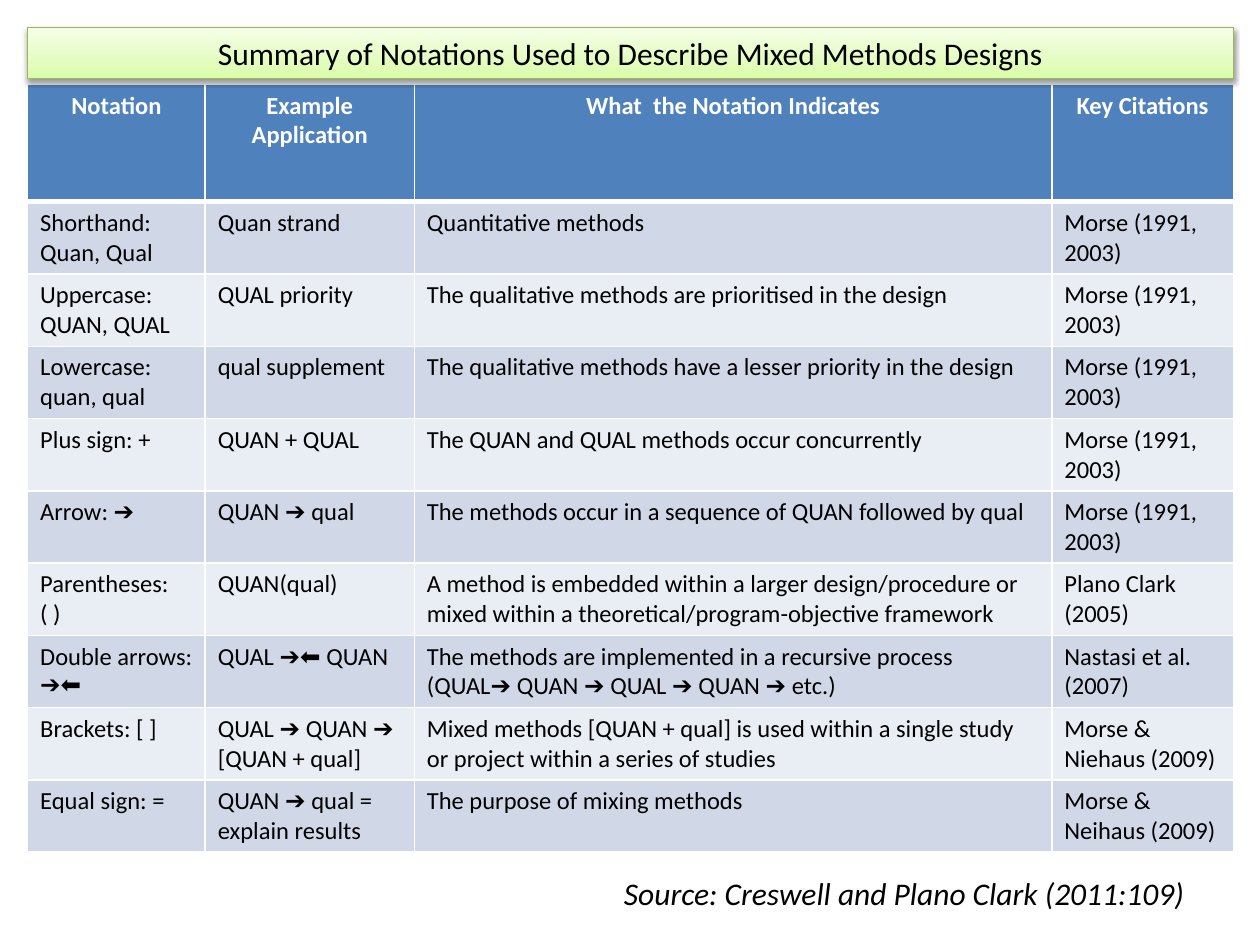
from itertools import groupby

from lxml import etree
from pptx import Presentation
from pptx.dml.color import RGBColor
from pptx.enum.text import MSO_ANCHOR, MSO_AUTO_SIZE, PP_ALIGN
from pptx.oxml import parse_xml
from pptx.oxml.ns import nsdecls, qn
from pptx.util import Pt

LEFT, CENTER, RIGHT = PP_ALIGN.LEFT, PP_ALIGN.CENTER, PP_ALIGN.RIGHT
MIDDLE = MSO_ANCHOR.MIDDLE
NO_AUTOFIT = MSO_AUTO_SIZE.NONE
FIT_SHAPE = MSO_AUTO_SIZE.SHAPE_TO_FIT_TEXT

COLORS = {
    "text": "000000",
    "white": "FFFFFF",
    "header": "4F81BD",
    "odd_row": "D0D8E8",
    "even_row": "E9EDF4",
    "title_line": "98B955",
}
TITLE_STOPS = [(0, "DAFDA7"), (35, "E4FCC2"), (100, "F5FFE7")]
ARROWS = "➔⬅"

COLUMN_WIDTHS = [101.5, 119.5, 364.3, 103.7]
HEADER_HEIGHT, ROW_HEIGHT, TABLE_HEIGHT = 67, 29.5, 434
ROWS = [
    ("Notation", "Example Application", "What  the Notation Indicates", "Key Citations"),
    ("Shorthand: Quan, Qual", "Quan strand", "Quantitative methods", "Morse (1991, 2003)"),
    ("Uppercase: QUAN, QUAL", "QUAL priority",
     "The qualitative methods are prioritised in the design", "Morse (1991, 2003)"),
    ("Lowercase: quan, qual", "qual supplement",
     "The qualitative methods have a lesser priority in the design", "Morse (1991, 2003)"),
    ("Plus sign: +", "QUAN + QUAL",
     "The QUAN and QUAL methods occur concurrently", "Morse (1991, 2003)"),
    ("Arrow: ➔", "QUAN ➔ qual",
     "The methods occur in a sequence of QUAN followed by qual", "Morse (1991, 2003)"),
    ("Parentheses: ( )", "QUAN(qual)",
     "A method is embedded within a larger design/procedure or mixed within a "
     "theoretical/program-objective framework", "Plano Clark (2005)"),
    ("Double arrows: ➔⬅", "QUAL ➔⬅ QUAN",
     "The methods are implemented in a recursive process "
     "(QUAL➔ QUAN ➔ QUAL ➔ QUAN ➔ etc.)", "Nastasi et al. (2007)"),
    ("Brackets: [ ]", "QUAL ➔ QUAN ➔ [QUAN + qual]",
     "Mixed methods [QUAN + qual] is used within a single study or project "
     "within a series of studies", "Morse & Niehaus (2009)"),
    ("Equal sign: =", "QUAN ➔ qual = explain results",
     "The purpose of mixing methods", "Morse & Neihaus (2009)"),
]


class SlideBuilder:
    def __init__(self, slide, font="Calibri", symbol_font="Arial"):
        self.slide = slide
        self.font = font
        self.symbol_font = symbol_font

    def add_text(self, para, text, size, color="text", align=LEFT, bold=False, italic=False):
        """Fill a paragraph, giving arrow symbols a run in the symbol font."""
        para.alignment = align
        for is_arrow, letters in groupby(text, lambda letter: letter in ARROWS):
            span = para.add_run()
            span.text = "".join(letters)
            span.font.name = self.symbol_font if is_arrow else self.font
            span.font.size = Pt(size)
            span.font.bold = bold
            span.font.italic = italic
            span.font.color.rgb = RGBColor.from_string(COLORS[color])

    def title(self, text, left, top, width, height):
        box = self.slide.shapes.title
        box.left, box.top, box.width, box.height = map(Pt, (left, top, width, height))
        box.text_frame.word_wrap = True
        box.text_frame.auto_size = NO_AUTOFIT
        box.text_frame.vertical_anchor = MIDDLE
        self.add_text(box.text_frame.paragraphs[0], text, 18, align=CENTER)
        stops = "".join(
            f'<a:gs pos="{place * 1000}"><a:srgbClr val="{color}"/></a:gs>'
            for place, color in TITLE_STOPS)
        properties = box._element.spPr
        properties.get_or_add_xfrm().addnext(parse_xml(
            f'<a:prstGeom {nsdecls("a")} prst="rect"><a:avLst/></a:prstGeom>'))
        properties.append(parse_xml(
            f'<a:gradFill {nsdecls("a")} rotWithShape="1"><a:gsLst>{stops}</a:gsLst>'
            '<a:lin ang="16200000" scaled="1"/></a:gradFill>'))
        box.line.color.rgb = RGBColor.from_string(COLORS["title_line"])
        box.line.width = Pt(0.75)
        properties.append(parse_xml(
            f'<a:effectLst {nsdecls("a")}><a:outerShdw blurRad="{Pt(3.1)}" dist="{Pt(1.6)}" '
            'dir="5400000" rotWithShape="0"><a:srgbClr val="000000"><a:alpha val="38000"/>'
            '</a:srgbClr></a:outerShdw></a:effectLst>'))
        # The title's shadow falls on the table, so the title goes in front.
        self.slide.shapes._spTree.append(box._element)

    def cell_borders(self, cell, bottom_width):
        properties = cell._tc.get_or_add_tcPr()
        widths = {"lnL": 1, "lnR": 1, "lnT": 1, "lnB": bottom_width}
        for position, (side, width) in enumerate(widths.items()):
            line = etree.Element(qn(f"a:{side}"), w=str(Pt(width)))
            fill = etree.SubElement(line, qn("a:solidFill"))
            etree.SubElement(fill, qn("a:srgbClr"), val=COLORS["white"])
            properties.insert(position, line)

    def table(self, rows, left, top):
        frame = self.slide.shapes.add_table(
            len(rows), len(COLUMN_WIDTHS), Pt(left), Pt(top),
            Pt(sum(COLUMN_WIDTHS)), Pt(TABLE_HEIGHT))
        table = frame.table
        for column, width in zip(table.columns, COLUMN_WIDTHS):
            column.width = Pt(width)
        for number, texts in enumerate(rows):
            is_header = number == 0
            table.rows[number].height = Pt(HEADER_HEIGHT if is_header else ROW_HEIGHT)
            fill = "header" if is_header else "odd_row" if number % 2 else "even_row"
            for cell, text in zip(table.rows[number].cells, texts):
                cell.fill.solid()
                cell.fill.fore_color.rgb = RGBColor.from_string(COLORS[fill])
                self.cell_borders(cell, 3 if is_header else 1)
                self.add_text(cell.text_frame.paragraphs[0], text, 14, bold=is_header,
                              color="white" if is_header else "text",
                              align=CENTER if is_header else LEFT)
        frame.height = Pt(TABLE_HEIGHT)

    def source_note(self, text, left, top, width, height):
        box = self.slide.shapes.add_textbox(*map(Pt, (left, top, width, height)))
        box.text_frame.word_wrap = True
        box.text_frame.auto_size = FIT_SHAPE
        self.add_text(box.text_frame.paragraphs[0], text, 18, align=RIGHT, italic=True)


def main():
    deck = Presentation()
    deck.slide_width, deck.slide_height = Pt(720), Pt(540)
    builder = SlideBuilder(deck.slides.add_slide(deck.slide_layouts[5]))
    builder.table(ROWS, 15.8, 48.3)
    builder.source_note("Source: Creswell and Plano Clark (2011:109)", 324.7, 496, 359.3, 29)
    builder.title("Summary of Notations Used to Describe Mixed Methods Designs",
                  15.8, 15.8, sum(COLUMN_WIDTHS), 29)
    deck.save("out.pptx")


if __name__ == "__main__":
    main()
